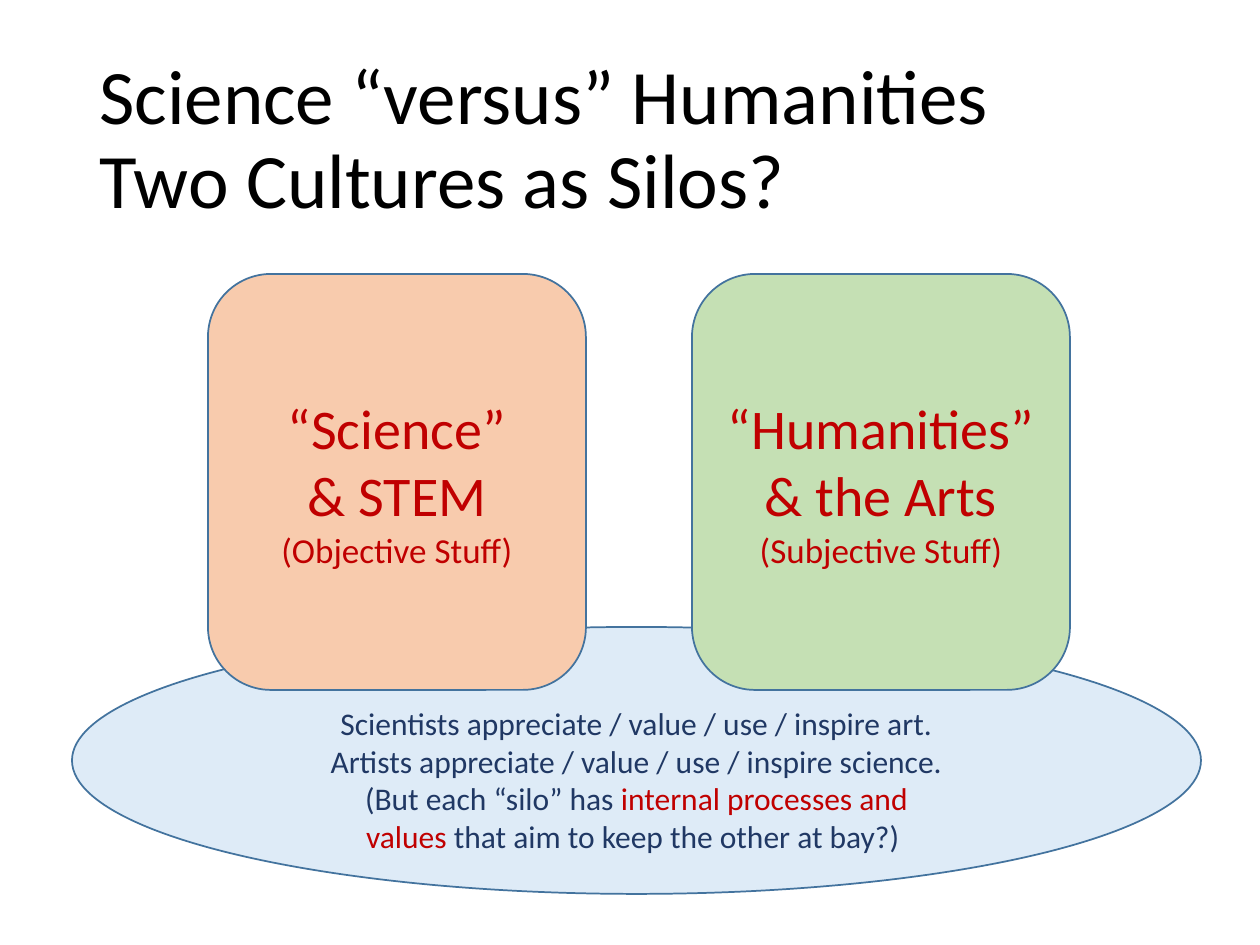
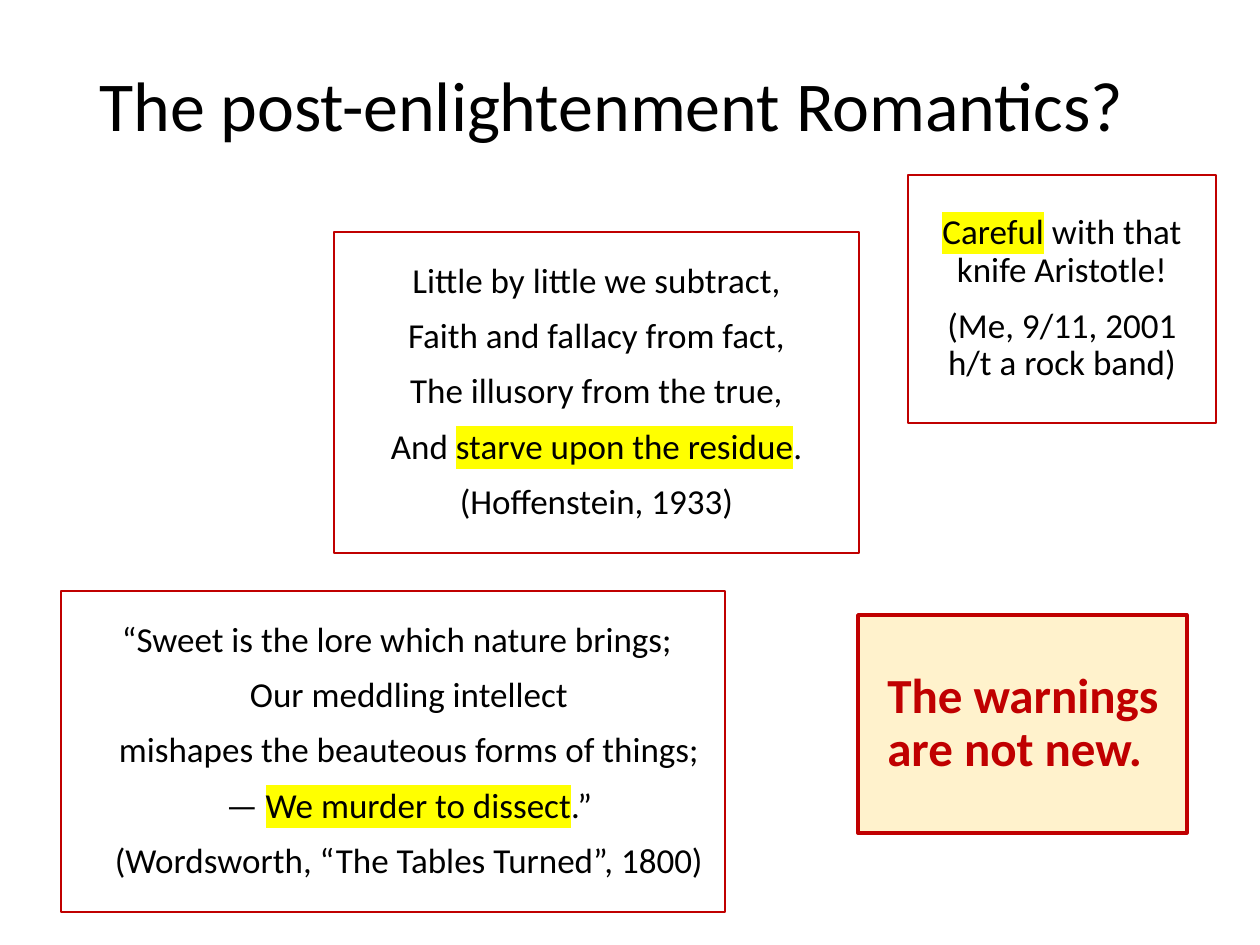
from pptx import Presentation
from pptx.dml.color import RGBColor
from pptx.enum.shapes import MSO_SHAPE
from pptx.enum.text import MSO_ANCHOR, PP_ALIGN
from pptx.util import Pt
from lxml.etree import SubElement
from pptx.oxml.ns import qn

PX = 914400 // 126  # EMU in one px


class Theme:
    font = "Calibri"
    ink, red, navy, edge = "000000", "C00000", "203864", "43739E"
    peach, green, sky, cream = "F8CBAD", "C5E0B4", "DEEBF7", "FFF2CC"
    mark = "FFFF00"
    title, title_low, silo, warn = 44, 40, 32, 28
    body, base = 20, 18


# Content: a paragraph is a list of runs, a run is (text, changes)
TITLES = ["Science “versus” Humanities\nTwo Cultures as Silos?",
          "The post-enlightenment Romantics?"]

SILOS = [
    (Theme.peach, ["“Science”", "& STEM"], "(Objective Stuff)"),
    (Theme.green, ["“Humanities”", "& the Arts"], "(Subjective Stuff)"),
]

GROUND = [
    [("Scientists appreciate / value / use / inspire art.", {})],
    [("Artists appreciate / value / use / inspire science.", {})],
    [("(But each “silo” has ", {}),
     ("internal processes and\nvalues", {"color": Theme.red}),
     (" that aim to keep the other at bay?) ", {})],
]

LIT = {"mark": Theme.mark}
# Quotes: box, indents in px, paragraphs
QUOTES = [
    ((334, 232, 525, 321), [0], [
        [("Little by little we subtract,", {})],
        [("Faith and fallacy from fact,", {})],
        [("The illusory from the true,", {})],
        [("And ", {}), ("starve upon the residue", LIT), (".", {})],
        [("(Hoffenstein, 1933)", {})]]),
    ((61, 591, 664, 321), [8, 32, 32, 32, 32], [
        [("“Sweet is the lore which nature brings;", {})],
        [("Our meddling intellect", {})],
        [("mishapes the beauteous forms of things;", {})],
        [("— ", {}), ("We murder to dissect", LIT), (".”", {})],
        [("(Wordsworth, “The Tables Turned”, 1800)", {})]]),
    ((908, 175, 308, 248), [0], [
        [("Careful", LIT), (" with that knife Aristotle!", {})],
        [("(Me, 9/11, 2001\nh/t a rock band)", {})]]),
]
WARNING = [[("The warnings are not new.", {"bold": True})]]


def add_run(para, text, size, color, bold=False, mark=None):
    for i, line in enumerate(text.split("\n")):
        if i:
            para.add_line_break()
        run = para.add_run()
        run.text = line
        font = run.font
        font.size, font.bold = Pt(size), bold
        font.color.rgb = RGBColor.from_string(color)
        if mark:
            glow = SubElement(font._element, qn("a:highlight"))
            SubElement(glow, qn("a:srgbClr")).set("val", mark)
        font.name = Theme.font


def write(shape, paras, size, color, align=PP_ALIGN.CENTER,
          lead=None, gap=0, dents=(0,)):
    frame = shape.text_frame
    frame.word_wrap = True
    frame.vertical_anchor = MSO_ANCHOR.MIDDLE
    for i, runs in enumerate(paras):
        para = frame.add_paragraph() if i else frame.paragraphs[0]
        para.alignment = align
        para.space_before = Pt(gap)
        if lead:
            para.line_spacing = lead
        dent = dents[i % len(dents)]
        if dent:
            para._p.get_or_add_pPr().set("marL", str(dent * PX))
        for text, look in runs:
            add_run(para, text, **{"size": size, "color": color, **look})


def add_box(slide, kind, box, fill, line, width):
    shape = slide.shapes.add_shape(kind, *(n * PX for n in box))
    shape.shadow.inherit = False
    if fill:
        shape.fill.solid()
        shape.fill.fore_color.rgb = RGBColor.from_string(fill)
    else:
        shape.fill.background()
    shape.line.color.rgb = RGBColor.from_string(line)
    shape.line.width = Pt(width)
    return shape


def add_page(deck, title, size, high):
    slide = deck.slides.add_slide(deck.slide_layouts[6])
    box = slide.shapes.add_textbox(*(n * PX for n in (87, 50, 1086, high)))
    write(box, [[(title, {})]], size, Theme.ink, PP_ALIGN.LEFT, lead=0.9)
    return slide


def draw_silos(deck):
    slide = add_page(deck, TITLES[0], Theme.title, 183)
    # Common ground, its text kept below the silos
    oval = add_box(slide, MSO_SHAPE.OVAL, (72, 627, 1129, 267),
                   Theme.sky, Theme.edge, 1)
    oval.text_frame.margin_top = 44 * PX
    write(oval, GROUND, Theme.base, Theme.navy)
    # Two silos side by side
    for i, (fill, heads, note) in enumerate(SILOS):
        silo = add_box(slide, MSO_SHAPE.ROUNDED_RECTANGLE,
                       (208 + 484 * i, 274, 378, 416), fill, Theme.edge, 1)
        paras = [[(head, {})] for head in heads]
        paras.append([(note, {"size": Theme.body})])
        write(silo, paras, Theme.silo, Theme.red)


def draw_quotes(deck):
    slide = add_page(deck, TITLES[1], Theme.title_low, 118)
    for box, dents, paras in QUOTES:
        quote = add_box(slide, MSO_SHAPE.RECTANGLE, box, None, Theme.red, 0.75)
        write(quote, paras, Theme.body, Theme.ink,
              lead=0.9, gap=10, dents=dents)
    # Closing remark
    sign = add_box(slide, MSO_SHAPE.RECTANGLE, (858, 615, 329, 218),
                   Theme.cream, Theme.red, 2)
    write(sign, WARNING, Theme.warn, Theme.red, PP_ALIGN.LEFT,
          lead=0.9, gap=10, dents=[17])


def main():
    deck = Presentation()
    deck.slide_width, deck.slide_height = 1260 * PX, 945 * PX
    draw_silos(deck)
    draw_quotes(deck)
    deck.save("out.pptx")


if __name__ == "__main__":
    main()
